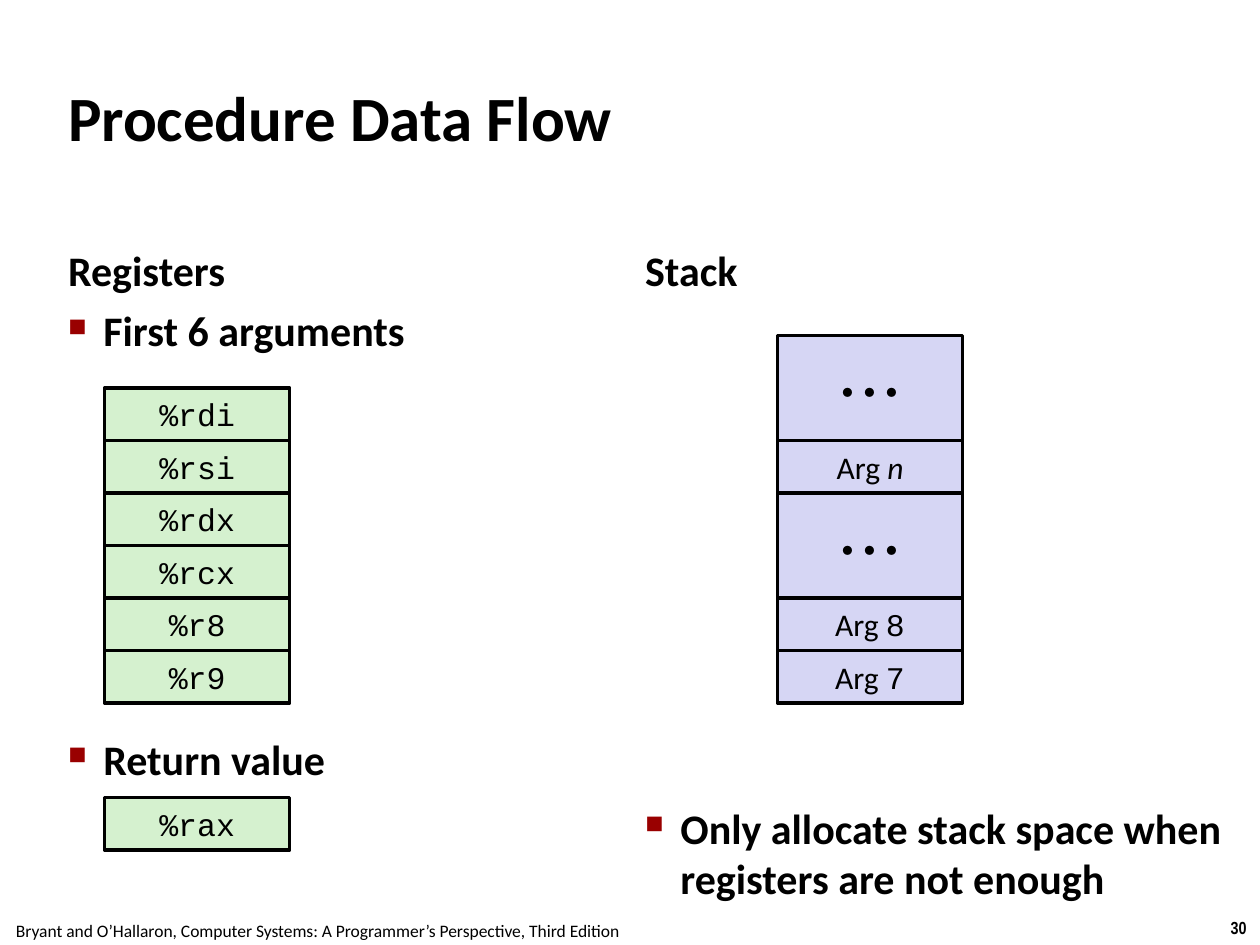
from lxml.etree import SubElement
from pptx import Presentation
from pptx.dml.color import RGBColor
from pptx.enum.shapes import MSO_SHAPE
from pptx.enum.text import MSO_ANCHOR as Anchor, PP_ALIGN as Align
from pptx.oxml.ns import qn
from pptx.util import Inches, Pt

BLACK = RGBColor(0x00, 0x00, 0x00)
RED = RGBColor(0x99, 0x00, 0x00)
GREEN = RGBColor(0xD5, 0xF1, 0xCF)
LAVENDER = RGBColor(0xD6, 0xD6, 0xF4)
SANS, MONO, DOTS = "Calibri", "Courier New", "Cabin"
ROW = 5 / 12
STACK_BOTTOM = 3.08 + 6 * ROW


class SlideBuilder:
    """Holds the style and the current slide, and adds each kind of element."""

    cell_width = 1.47
    inset = 0.04
    indent = 0.28

    def __init__(self, page):
        self.page = page

    def set_insets(self, frame, side, vertical):
        frame.margin_left = frame.margin_right = Inches(side)
        frame.margin_top = frame.margin_bottom = Inches(vertical)

    def style(self, span, size, font=SANS, bold=False, italic=False):
        span.font.size, span.font.name = Pt(size), font
        span.font.bold, span.font.italic = bold, italic
        span.font.color.rgb = BLACK

    def text(self, words, left, top, width, height, size=24, anchor=Anchor.TOP):
        box = self.page.shapes.add_textbox(
            Inches(left), Inches(top), Inches(width), Inches(height))
        frame = box.text_frame
        frame.text = words
        frame.word_wrap = True
        frame.vertical_anchor = anchor
        self.set_insets(frame, self.inset, self.inset)
        para = frame.paragraphs[0]
        self.style(para.runs[0], size, bold=True)
        return para

    def bullet(self, words, left, top, width, height):
        props = self.text(words, left, top, width, height)._p.get_or_add_pPr()
        props.set("marL", str(Inches(self.indent)))
        props.set("indent", str(-Inches(self.indent)))
        color = SubElement(props, qn("a:buClr"))
        SubElement(color, qn("a:srgbClr"), val=str(RED))
        SubElement(props, qn("a:buSzPct"), val="60000")
        SubElement(props, qn("a:buChar"), char="■")

    def footer(self, words, left, top, width, font=SANS, bold=False):
        para = self.text(words, left, top, width, 0.27, 10)
        para.alignment = Align.CENTER
        self.style(para.runs[0], 10, font, bold)
        frame = self.page.shapes[-1].text_frame
        frame.word_wrap = False
        self.set_insets(frame, 0.1, 0.05)

    def cell(self, spans, left, top, fill, rows=1, size=18, inset=inset):
        box = self.page.shapes.add_shape(
            MSO_SHAPE.RECTANGLE, Inches(left), Inches(top),
            Inches(self.cell_width), Inches(rows * ROW))
        box.shadow.inherit = False
        box.fill.solid()
        box.fill.fore_color.rgb = fill
        box.line.color.rgb = BLACK
        box.line.width = Pt(2)
        frame = box.text_frame
        frame.vertical_anchor = Anchor.MIDDLE
        self.set_insets(frame, inset, inset)
        para = frame.paragraphs[0]
        para.alignment = Align.CENTER
        for words, font, italic in spans:
            span = para.add_run()
            span.text = words
            self.style(span, size, font, italic=italic)

    def register(self, name, top):
        self.cell([(name, MONO, False)], 0.83, top, GREEN)

    def argument(self, label, font, italic, top):
        spans = [("Arg ", SANS, False), (label, font, italic)]
        self.cell(spans, 6.17, top, LAVENDER)

    def gap(self, top):
        self.cell([("• • •", DOTS, False)], 6.17, top, LAVENDER, 2, 24, 0)


def main():
    deck = Presentation()
    deck.slide_width, deck.slide_height = Inches(10), Inches(7.5)
    slide = SlideBuilder(deck.slides.add_slide(deck.slide_layouts[6]))

    slide.footer("30", 9.66, 7.23, 0.34, "Arial Narrow", True)
    slide.footer("Bryant and O’Hallaron, Computer Systems: "
                 "A Programmer’s Perspective, Third Edition", -0.02, 7.25, 5.08)
    slide.text("Procedure Data Flow", 0.5, 0.3, 9, 1.25, 36, Anchor.MIDDLE)
    for heading, left in (("Registers", 0.5), ("Stack", 5.08)):
        slide.text(heading, left, 1.68, 4.42, 0.7, anchor=Anchor.BOTTOM)

    slide.bullet("First 6 arguments", 0.5, 2.38, 4.42, 0.5)
    slide.bullet("Return value", 0.5, 5.78, 4.42, 0.5)
    slide.bullet("Only allocate stack space when registers are not enough",
                 5.08, 6.33, 4.75, 0.9)

    names = ("%rdi", "%rsi", "%rdx", "%rcx", "%r8", "%r9")
    for index, name in enumerate(names):
        slide.register(name, 3.08 + index * ROW)
    slide.register("%rax", 6.33)

    arguments = (("7", MONO, False, 1), ("8", MONO, False, 2), ("n", SANS, True, 5))
    for label, font, italic, level in arguments:
        slide.argument(label, font, italic, STACK_BOTTOM - level * ROW)
    for level in (4, 7):
        slide.gap(STACK_BOTTOM - level * ROW)

    deck.save("out.pptx")


if __name__ == "__main__":
    main()
